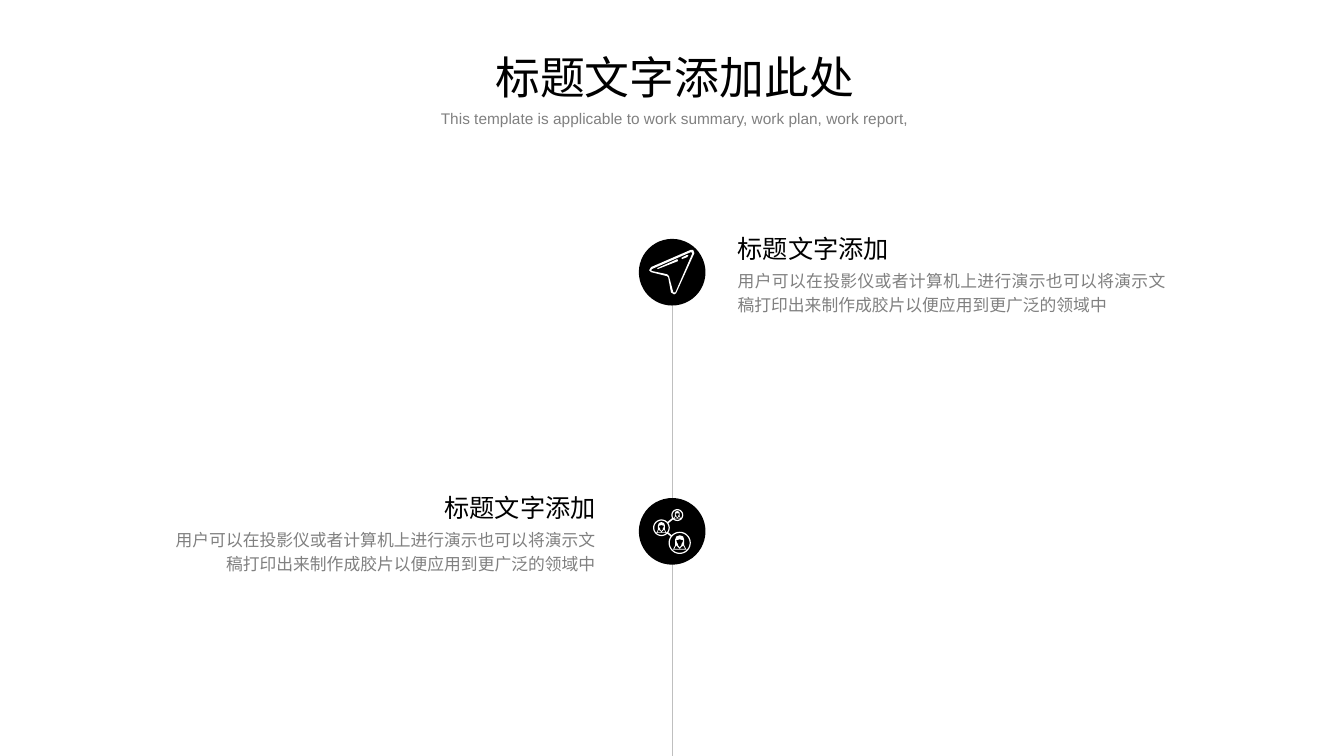
from math import cos, hypot, pi, sin

from lxml import etree
from pptx import Presentation
from pptx.dml.color import RGBColor
from pptx.enum.shapes import MSO_CONNECTOR, MSO_SHAPE
from pptx.enum.text import MSO_AUTO_SIZE, PP_ALIGN
from pptx.oxml.ns import qn
from pptx.util import Cm, Pt

CENTER, RIGHT, JUSTIFY = PP_ALIGN.CENTER, PP_ALIGN.RIGHT, PP_ALIGN.JUSTIFY
FIT_SHAPE = MSO_AUTO_SIZE.SHAPE_TO_FIT_TEXT
OVAL, STRAIGHT = MSO_SHAPE.OVAL, MSO_CONNECTOR.STRAIGHT

BLACK, GREY, LINE_GREY, WHITE = "000000", "808080", "BFBFBF", "FFFFFF"
SLIDE_WIDTH, SLIDE_HEIGHT = 33.87, 19.05
AXIS_X, DISC_RADIUS = 16.94, 0.84
FIRST_Y, SECOND_Y = 6.86, 13.39
HEADING_WIDTH, BODY_WIDTH = 6.22, 11.3
RIGHT_TEXT_LEFT, LEFT_TEXT_EDGE = 18.34, 15.26

HEADING = "标题文字添加"
BODY = "用户可以在投影仪或者计算机上进行演示也可以将演示文稿打印出来制作成胶片以便应用到更广泛的领域中"

PLANE = [
    [(0.46, -0.56), (0.53, -0.56), (0.56, -0.48), (0.1, 0.53), (0.05, 0.56), (-0.03, 0.51),
     (-0.1, 0.13), (-0.13, 0.1), (-0.53, 0), (-0.58, -0.05), (-0.53, -0.13)],
    [(0.48, -0.51), (-0.51, -0.08), (-0.53, -0.05), (-0.51, -0.03), (-0.13, 0.05),
     (-0.08, 0.1), (0.03, 0.51), (0.08, 0.51), (0.51, -0.48)],
    [(0.13, -0.33), (0.15, -0.28), (-0.36, -0.08), (-0.38, -0.1)],
    [(0.36, -0.43), (0.41, -0.43), (0.38, -0.38), (0.25, -0.33), (0.23, -0.36)],
]
BUST = [
    [(-0.6, 0.6), (-0.41, 0.23), (-0.41, -0.3), (-0.3, -0.58), (0, -0.68),
     (0.3, -0.58), (0.41, -0.3), (0.41, 0.23), (0.6, 0.6)],
    [(-0.32, -0.23), (0, -0.32), (0.32, -0.23), (0.23, 0), (0.14, 0.14),
     (0.2, 0.16), (0, 0.41), (-0.2, 0.16), (-0.14, 0.14), (-0.23, 0)],
    [(-0.32, 0.23), (-0.5, 0.55), (0.5, 0.55), (0.32, 0.23), (0, 0.52)],
]
NODES = [(0.13, -0.41, 0.15), (-0.27, -0.09, 0.21), (0.19, 0.29, 0.28)]
RING = 0.03


def color(value):
    """Turn a hex string into a colour."""
    return RGBColor.from_string(value)


def circle(x, y, radius, steps=40):
    """Return the points of a circle."""
    angles = [2 * pi * step / steps for step in range(steps)]
    return [(x + radius * cos(angle), y + radius * sin(angle)) for angle in angles]


def bar(start, end, half_width=0.02):
    """Return the outline of a bar between the edges of two nodes."""
    (x1, y1, r1), (x2, y2, r2) = start, end
    length = hypot(x2 - x1, y2 - y1)
    dx, dy = (x2 - x1) / length, (y2 - y1) / length
    corners = [(r1, 1), (length - r2, 1), (length - r2, -1), (r1, -1)]
    return [(x1 + dx * along - dy * side * half_width, y1 + dy * along + dx * side * half_width)
            for along, side in corners]


def network():
    """Return the outlines of three linked people."""
    outlines = [bar(start, end) for start, end in zip(NODES, NODES[1:])]
    for x, y, radius in NODES:
        outlines += [circle(x, y, radius), circle(x, y, radius - RING)]
        outlines += [[(x + u * radius, y + v * radius) for u, v in part] for part in BUST]
    return outlines


class TimelineSlide:
    """Draw the elements of the timeline in one style."""

    font = "Arial"

    def __init__(self, slide):
        """Keep the current slide."""
        self.shapes = slide.shapes

    def text(self, content, left, top, width, height, size, ink, align, spacing=1.2, wrap=True):
        """Add a text box."""
        box = self.shapes.add_textbox(Cm(left), Cm(top), Cm(width), Cm(height))
        frame = box.text_frame
        frame.text = content
        frame.word_wrap = wrap
        frame.auto_size = FIT_SHAPE
        paragraph = frame.paragraphs[0]
        paragraph.alignment = align
        paragraph.line_spacing = spacing
        font = paragraph.runs[0].font
        font.name, font.size = self.font, Pt(size)
        font.color.rgb = color(ink)
        return box

    def axis(self, top, bottom):
        """Add the vertical line."""
        line = self.shapes.add_connector(STRAIGHT, Cm(AXIS_X), Cm(top), Cm(AXIS_X), Cm(bottom))
        line.line.color.rgb = color(LINE_GREY)
        line.line.width = Pt(0.5)
        etree.SubElement(line._element.spPr, qn("a:effectLst"))

    def paint(self, shape, fill):
        """Give a shape a plain fill."""
        shape.shadow.inherit = False
        shape.fill.solid()
        shape.fill.fore_color.rgb = color(fill)
        shape.line.fill.background()

    def icon(self, outlines, center_y):
        """Add a black disc with a white icon."""
        size = Cm(2 * DISC_RADIUS)
        disc = self.shapes.add_shape(
            OVAL, Cm(AXIS_X - DISC_RADIUS), Cm(center_y - DISC_RADIUS), size, size)
        self.paint(disc, BLACK)
        placed = [[(Cm(AXIS_X + x), Cm(center_y + y)) for x, y in part] for part in outlines]
        builder = self.shapes.build_freeform(*placed[0][0])
        builder.add_line_segments(placed[0][1:])
        for part in placed[1:]:
            builder.move_to(*part[0])
            builder.add_line_segments(part[1:])
        symbol = builder.convert_to_shape()
        self.paint(symbol, WHITE)
        self.shapes.add_group_shape([disc, symbol])

    def entry(self, center_y, body_left, heading_left, align):
        """Add a heading with its body text."""
        body = self.text(BODY, body_left, center_y - 0.26, BODY_WIDTH, 1.5, 12, GREY, align)
        heading = self.text(
            HEADING, heading_left, center_y - 1.25, HEADING_WIDTH, 1.12, 18, BLACK, align)
        self.shapes.add_group_shape([body, heading])


def main():
    """Build and save the slide."""
    presentation = Presentation()
    presentation.slide_width, presentation.slide_height = Cm(SLIDE_WIDTH), Cm(SLIDE_HEIGHT)
    timeline = TimelineSlide(presentation.slides.add_slide(presentation.slide_layouts[6]))
    title = timeline.text("标题文字添加此处", 12.19, 1.14, 9.63, 1.63, 32, BLACK, CENTER, 1.0, False)
    subtitle = timeline.text("This template is applicable to work summary, work plan, work report,",
                             9.22, 2.54, 15.57, 0.76, 11, GREY, CENTER)
    timeline.shapes.add_group_shape([title, subtitle])
    timeline.axis(FIRST_Y + DISC_RADIUS, SLIDE_HEIGHT)
    timeline.icon(PLANE, FIRST_Y)
    timeline.icon(network(), SECOND_Y)
    timeline.entry(FIRST_Y, RIGHT_TEXT_LEFT, RIGHT_TEXT_LEFT, JUSTIFY)
    timeline.entry(SECOND_Y, LEFT_TEXT_EDGE - BODY_WIDTH, LEFT_TEXT_EDGE - HEADING_WIDTH, RIGHT)
    presentation.save("out.pptx")


if __name__ == "__main__":
    main()
